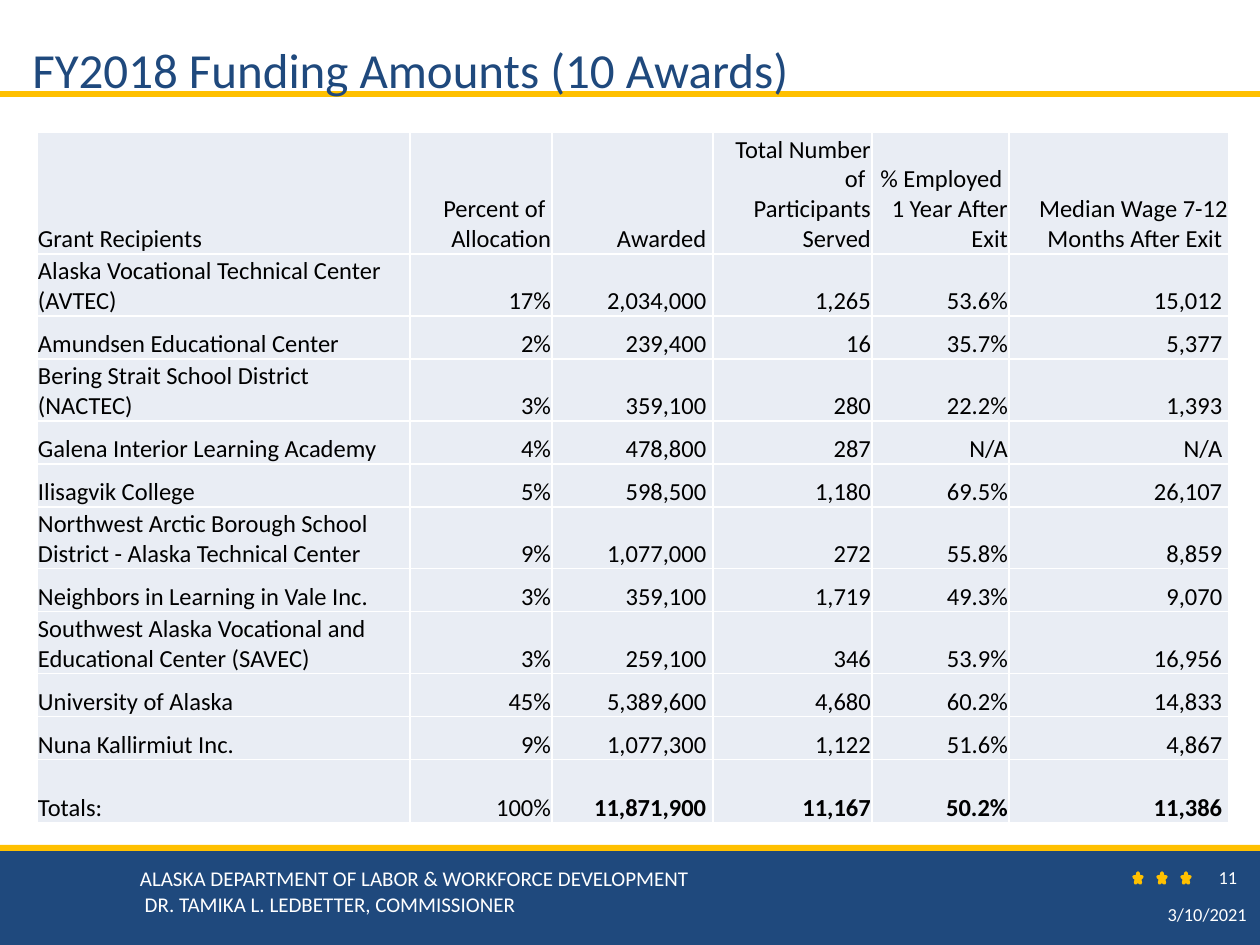
from copy import deepcopy

from pptx import Presentation
from pptx.dml.color import RGBColor as RGB
from pptx.enum.shapes import MSO_CONNECTOR as CONN, MSO_SHAPE as SHAPE
from pptx.enum.text import MSO_ANCHOR as ANCHOR, PP_ALIGN as ALIGN
from pptx.oxml import parse_xml
from pptx.oxml.ns import nsdecls, qn
from pptx.util import Emu, Pt

COLORS = {"navy": "1F497D", "gold": "FFC000", "white": "FFFFFF",
          "black": "000000", "cell": "E9EDF4"}
SCALE = 914400 / 126  # EMU in one px

HEADER = ["Grant Recipients", "Percent of \nAllocation", "Awarded",
          "Total Number of \nParticipants Served",
          "% Employed \n1 Year After Exit", "Median Wage 7-12 Months After Exit"]
GRANTS = [
    ["Alaska Vocational Technical Center (AVTEC)", "17%", "2,034,000", "1,265", "53.6%", "15,012"],
    ["Amundsen Educational Center", "2%", "239,400", "16", "35.7%", "5,377"],
    ["Bering Strait School District (NACTEC)", "3%", "359,100", "280", "22.2%", "1,393"],
    ["Galena Interior Learning Academy", "4%", "478,800", "287", "N/A", "N/A"],
    ["Ilisagvik College", "5%", "598,500", "1,180", "69.5%", "26,107"],
    ["Northwest Arctic Borough School District - Alaska Technical Center",
     "9%", "1,077,000", "272", "55.8%", "8,859"],
    ["Neighbors in Learning in Vale Inc.", "3%", "359,100", "1,719", "49.3%", "9,070"],
    ["Southwest Alaska Vocational and Educational Center (SAVEC)",
     "3%", "259,100", "346", "53.9%", "16,956"],
    ["University of Alaska", "45%", "5,389,600", "4,680", "60.2%", "14,833"],
    ["Nuna Kallirmiut Inc.", "9%", "1,077,300", "1,122", "51.6%", "4,867"],
]
TOTALS = ["Totals:", "100%", "11,871,900", "11,167", "50.2%", "11,386"]
COL_WIDTHS = [373, 142, 161, 159, 137, 220]
MONEY_COLS = (2, 5)  # accounting format: one space after the figure
HEADER_H, ONE_LINE, TWO_LINES, TOTALS_H = 122, 43, 62, 63
WRAP_AT = 35  # longer recipient names take two lines


def px(n):
    return Emu(round(n * SCALE))


def rgb(name):
    return RGB.from_string(COLORS[name])


class Deck:
    font = "Calibri"

    def __init__(self, w, h):
        self.prs = Presentation()
        self.prs.slide_width, self.prs.slide_height = px(w), px(h)
        self.s = self.prs.slides.add_slide(self.prs.slide_layouts[6])

    def shape(self, kind, box, fill, line=None, parent=None):
        sp = (parent or self.s).shapes.add_shape(kind, *map(px, box))
        sp.shadow.inherit = False
        sp.fill.solid()
        sp.fill.fore_color.rgb = rgb(fill)
        if line:
            sp.line.color.rgb = rgb(fill)
            sp.line.width = Pt(line)
        else:
            sp.line.fill.background()

    def line(self, x1, y1, x2, y2, color, width):
        ln = self.s.shapes.add_connector(CONN.STRAIGHT, *map(px, (x1, y1, x2, y2)))
        ln.line.color.rgb = rgb(color)
        ln.line.width = Pt(width)
        ln._element.spPr.append(parse_xml(f"<a:effectLst {nsdecls('a')}/>"))

    def para(self, p, text, color, size, align=ALIGN.LEFT, bold=False):
        p.text = text
        p.alignment = align
        fmt = {"name": self.font, "size": Pt(size), "bold": bold}
        for r in p.runs:
            for key, value in fmt.items():
                setattr(r.font, key, value)
            r.font.color.rgb = rgb(color)
        # line breaks take the size of the text around them
        for br in p._p.findall(qn("a:br")):
            br.append(deepcopy(p.runs[0]._r.rPr))

    def text(self, box, lines, color, size, align=ALIGN.LEFT, anchor=ANCHOR.TOP, inset=True):
        tf = self.s.shapes.add_textbox(*map(px, box)).text_frame
        tf.word_wrap = True
        tf.vertical_anchor = anchor
        if not inset:
            for side in ("left", "top", "right", "bottom"):
                setattr(tf, f"margin_{side}", 0)
        for i, line in enumerate(lines):
            p = tf.add_paragraph() if i else tf.paragraphs[0]
            self.para(p, line, color, size, align)

    def border(self, cell):
        tc_pr = cell._tc.get_or_add_tcPr()
        for i, side in enumerate(("lnL", "lnR", "lnT", "lnB")):
            tc_pr.insert(i, parse_xml(
                f'<a:{side} {nsdecls("a")} w="{Pt(1)}"><a:solidFill>'
                f'<a:srgbClr val="{COLORS["white"]}"/></a:solidFill></a:{side}>'))

    def table(self, x, y, widths, heights, rows):
        tbl = self.s.shapes.add_table(len(rows), len(widths), px(x), px(y),
                                      px(sum(widths)), px(sum(heights))).table
        for col, w in zip(tbl.columns, widths):
            col.width = px(w)
        fmt = {"margin_left": px(1), "margin_right": px(1), "margin_top": px(1),
               "margin_bottom": 0, "vertical_anchor": ANCHOR.BOTTOM}
        for i, (row, h) in enumerate(zip(rows, heights)):
            tbl.rows[i].height = px(h)
            for j, value in enumerate(row):
                cell = tbl.cell(i, j)
                for key, setting in fmt.items():
                    setattr(cell, key, setting)
                cell.fill.solid()
                cell.fill.fore_color.rgb = rgb("cell")
                self.border(cell)
                self.para(cell.text_frame.paragraphs[0],
                          f"{value} " if j in MONEY_COLS else value, "black", 14,
                          ALIGN.RIGHT if j else ALIGN.LEFT,
                          bold=i == len(rows) - 1 and j > 1)


def main():
    d = Deck(1260, 945)

    # Footer band and gold rules
    d.shape(SHAPE.RECTANGLE, (0, 849, 1260, 96), "navy")
    d.line(0, 94, 1260, 94, "gold", 3)
    d.shape(SHAPE.RECTANGLE, (0, 845, 1260, 6), "gold")

    # Three stars
    grp = d.s.shapes.add_group_shape()
    for i in range(3):
        d.shape(SHAPE.STAR_5_POINT, (1134 + 24 * i, 873, 8, 10), "gold", 2, grp)

    # Footer text
    d.text((1028, 898, 231, 32), ["3/10/2021"], "white", 10.5, ALIGN.RIGHT, ANCHOR.MIDDLE)
    d.text((140, 866, 721, 50),
           ["ALASKA DEPARTMENT OF LABOR & WORKFORCE DEVELOPMENT",
            " DR. TAMIKA L. LEDBETTER, COMMISSIONER"], "white", 12, inset=False)
    d.text((1173, 866, 110, 23), ["11"], "white", 10.5, ALIGN.CENTER, inset=False)

    # Title
    d.text((20, 33, 867, 69), ["FY2018 Funding Amounts (10 Awards)"], "navy", 28)

    # Funding table
    grant_heights = [TWO_LINES if len(g[0]) > WRAP_AT else ONE_LINE for g in GRANTS]
    d.table(37, 132, COL_WIDTHS, [HEADER_H, *grant_heights, TOTALS_H],
            [HEADER, *GRANTS, TOTALS])

    d.prs.save("out.pptx")


if __name__ == "__main__":
    main()
